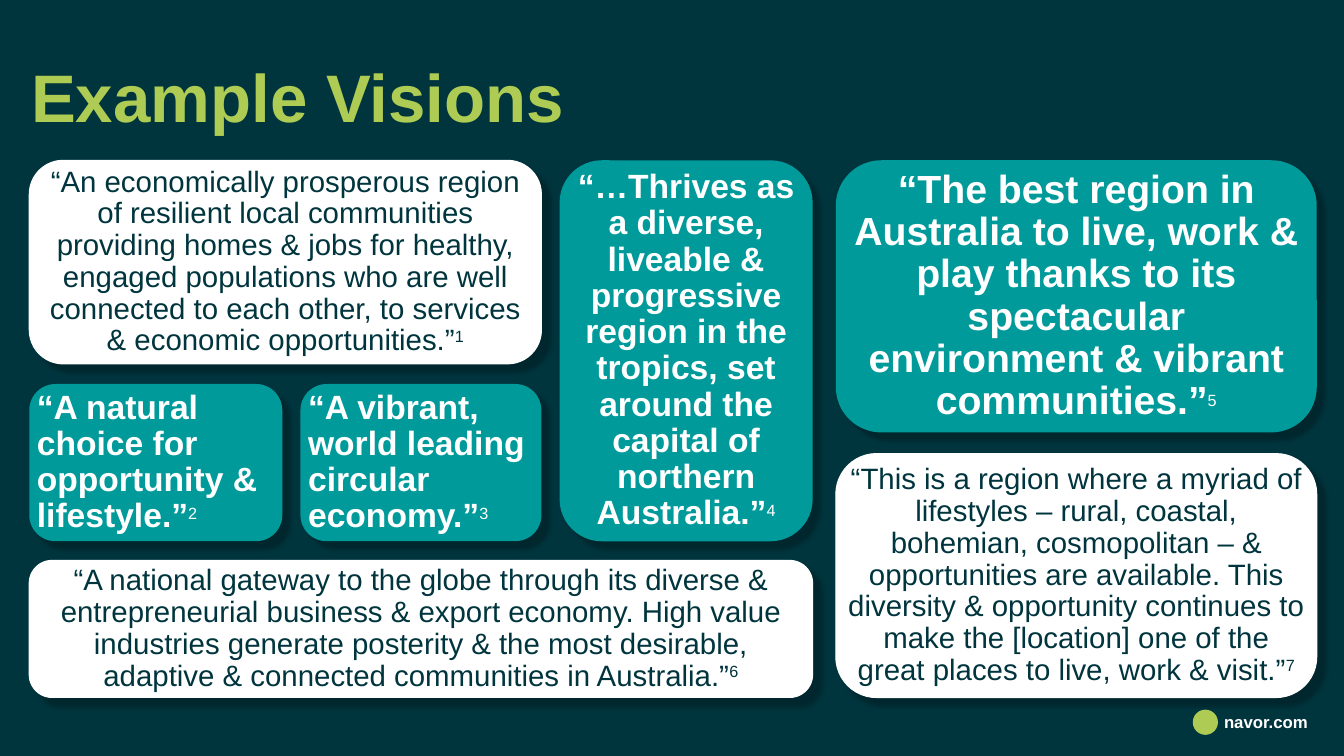
import pptx
import pptx.dml.color
import pptx.enum.shapes
import pptx.enum.text
import pptx.oxml
import pptx.oxml.ns
import pptx.util

COLORS = {"night": "00353E", "teal": "009A9B", "lime": "AECC53", "white": "FFFFFF", "shadow": "000000"}
FONT = "Arial"
INCH = pptx.util.Inches
ALIGN = pptx.enum.text.PP_ALIGN
ANCHOR = pptx.enum.text.MSO_ANCHOR
SHAPE = pptx.enum.shapes.MSO_SHAPE


def rgb(name):
    return pptx.dml.color.RGBColor.from_string(COLORS[name])


def write(holder, text, size, color, bold=True, note="", align=ALIGN.LEFT,
          anchor=ANCHOR.MIDDLE, spacing=1.0, before=0):
    """Fill a shape with one paragraph, ending in an optional superscript note."""
    frame = holder.text_frame
    frame.word_wrap = True
    frame.vertical_anchor = anchor
    frame.margin_left = frame.margin_right = frame.margin_top = frame.margin_bottom = 0
    paragraph = frame.paragraphs[0]
    paragraph.alignment = align
    paragraph.line_spacing = spacing
    paragraph.space_before = pptx.util.Pt(before)
    for words, points, heavy in ((text, size, bold), (note, 20, False)):
        if words:
            run = paragraph.add_run()
            run.text = words
            run.font.name = FONT
            run.font.size = pptx.util.Pt(points)
            run.font.bold = heavy
            run.font.color.rgb = rgb(color)
    if note:
        run.font._element.set("baseline", "30000")


deck = pptx.Presentation()
deck.slide_width, deck.slide_height = INCH(13.33), INCH(7.5)
slide = deck.slides.add_slide(deck.slide_layouts[6])
slide.background.fill.solid()
slide.background.fill.fore_color.rgb = rgb("night")

title = slide.shapes.add_textbox(INCH(0.31), INCH(0.55), INCH(9.72), INCH(1))
write(title, "Example Visions", 48, "lime", anchor=ANCHOR.TOP)

# Grid edges in inches: cards span from a start edge to an end edge
col_start, col_end = (0.29, 2.98, 5.55, 8.29), (2.8, 5.37, 8.06, 13.06)
row_start, row_end = (1.59, 3.81, 4.5, 5.56), (3.61, 4.29, 5.37, 6.92)

# First and last column, first and last row, fill, text size, alignment, note, vision
visions = [
    (0, 1, 0, 0, "white", 21, ALIGN.CENTER, "1",
     "“An economically prosperous region of resilient local communities providing homes & jobs "
     "for healthy, engaged populations who are well connected to each other, to services "
     "& economic opportunities.”"),
    (0, 0, 1, 2, "teal", 24, ALIGN.LEFT, "2",
     "“A natural choice for opportunity & lifestyle.”"),
    (0, 2, 3, 3, "white", 21, ALIGN.CENTER, "6",
     "“A national gateway to the globe through its diverse & entrepreneurial business & export "
     "economy. High value industries generate posterity & the most desirable, adaptive & "
     "connected communities in Australia.”"),
    (3, 3, 2, 3, "white", 21, ALIGN.CENTER, "7",
     "“This is a region where a myriad of lifestyles – rural, coastal, bohemian, cosmopolitan – "
     "& opportunities are available. This diversity & opportunity continues to make the "
     "[location] one of the great places to live, work & visit.”"),
    (2, 2, 0, 2, "teal", 24, ALIGN.CENTER, "4",
     "“…Thrives as a diverse, liveable & progressive region in the tropics, set around the "
     "capital of northern Australia.”"),
    (3, 3, 0, 1, "teal", 28, ALIGN.CENTER, "5",
     "“The best region in Australia to live, work & play thanks to its spectacular environment "
     "& vibrant communities.”"),
    (1, 1, 1, 2, "teal", 24, ALIGN.LEFT, "3",
     "“A vibrant, world leading circular economy.”"),
]

shadow_xml = (
    f'<a:effectLst {pptx.oxml.ns.nsdecls("a")}>'
    f'<a:outerShdw blurRad="{pptx.util.Pt(3)}" dist="{pptx.util.Pt(8)}" dir="2700000" algn="tl" rotWithShape="0">'
    f'<a:srgbClr val="{COLORS["shadow"]}"><a:alpha val="26000"/></a:srgbClr>'
    '</a:outerShdw></a:effectLst>'
)

for first_col, last_col, first_row, last_row, fill, size, align, note, vision in visions:
    left, top = col_start[first_col], row_start[first_row]
    card = slide.shapes.add_shape(
        SHAPE.ROUNDED_RECTANGLE, INCH(left), INCH(top),
        INCH(col_end[last_col] - left), INCH(row_end[last_row] - top))
    card.fill.solid()
    card.fill.fore_color.rgb = rgb(fill)
    on_teal = fill == "teal"
    if on_teal:
        card.line.fill.background()
    else:
        card.line.color.rgb = rgb("white")
        card.line.width = pptx.util.Pt(0.75)
    card._element.spPr.append(pptx.oxml.parse_xml(shadow_xml))
    write(card, vision, size, "white" if on_teal else "night", bold=on_teal,
          note=note, align=align, spacing=0.9, before=10)

emblem = slide.shapes.add_shape(SHAPE.OVAL, INCH(11.83), INCH(7.04), INCH(0.25), INCH(0.25))
emblem.shadow.inherit = False
emblem.fill.solid()
emblem.fill.fore_color.rgb = rgb("lime")
emblem.line.fill.background()

address = slide.shapes.add_textbox(INCH(12.14), INCH(7.04), INCH(1.1), INCH(0.25))
write(address, "navor.com", 12, "white")

deck.save("out.pptx")
